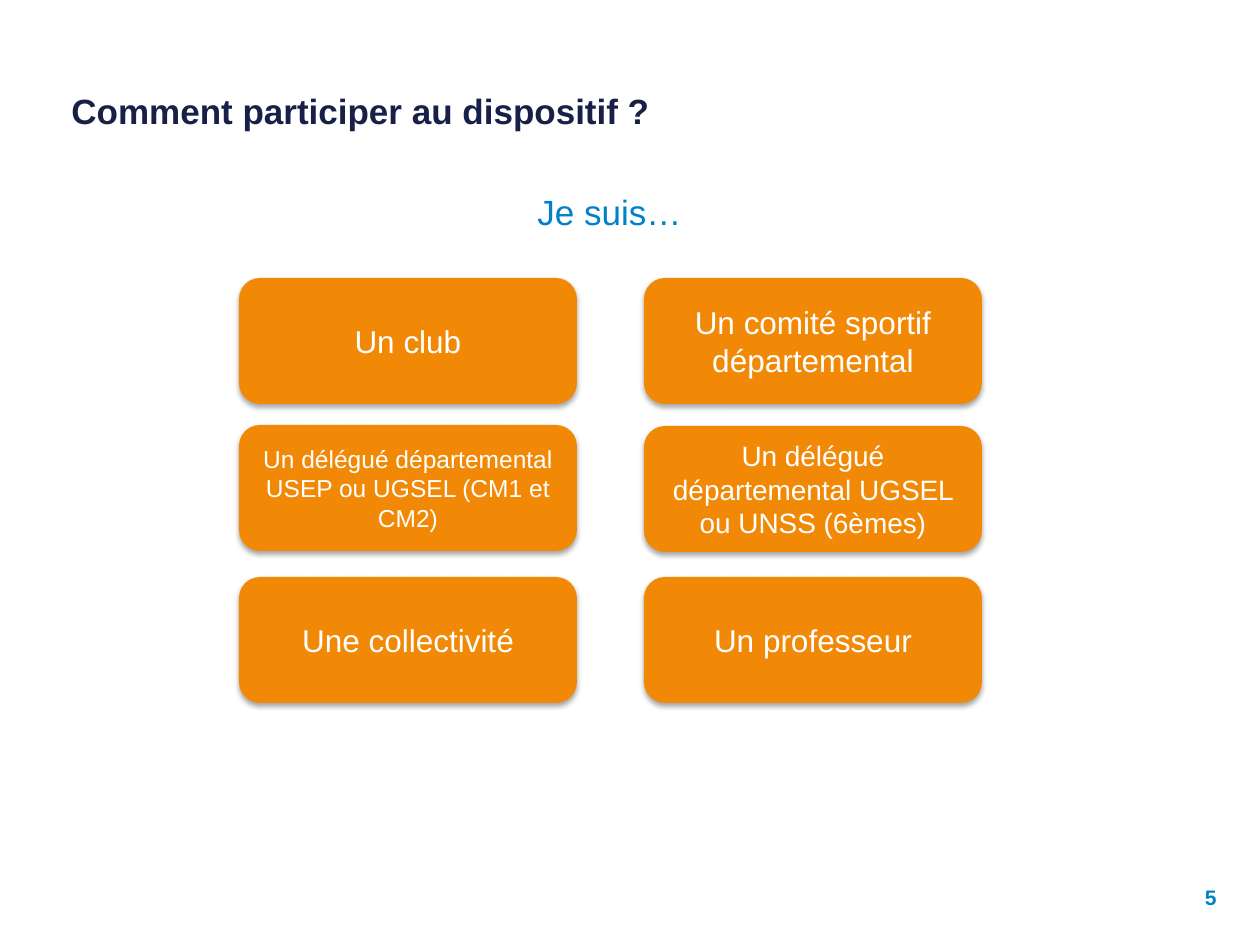
from lxml.etree import SubElement
from pptx import Presentation
from pptx.dml.color import RGBColor
from pptx.enum.shapes import MSO_SHAPE
from pptx.enum.text import MSO_ANCHOR, PP_ALIGN
from pptx.oxml.ns import qn
from pptx.util import Emu, Pt

PX = 914400 / 126
NAVY, BLUE, ORANGE, WHITE = "182048", "0081C8", "F18907", "FFFFFF"
COLUMNS = (239, 644)
CARD_WIDTH, CARD_HEIGHT = 338, 126
CARDS = [
    (0, 278, "Un club", 18),
    (1, 278, "Un comité sportif départemental", 18),
    (0, 577, "Une collectivité", 18),
    (1, 577, "Un professeur", 18),
    (0, 425, "Un délégué départemental USEP ou UGSEL (CM1 et CM2)", 14),
    (1, 426, "Un délégué départemental UGSEL ou UNSS (6èmes)", 16),
]


def color(value):
    return RGBColor.from_string(value)


class SlideBuilder:
    """Holds the style and the current slide, and adds its elements."""

    font_name = "Arial"

    def __init__(self, slide):
        self.slide = slide

    def box(self, *lengths):
        return [Emu(round(length * PX)) for length in lengths]

    def set_text(self, shape, text, size, fill, align, anchor, bold=False):
        frame = shape.text_frame
        frame.word_wrap = True
        frame.vertical_anchor = anchor
        paragraph = frame.paragraphs[0]
        paragraph.text = text
        paragraph.alignment = align
        font = paragraph.runs[0].font
        style = {"name": self.font_name, "size": Pt(size), "bold": bold}
        for name, value in style.items():
            setattr(font, name, value)
        font.color.rgb = color(fill)

    def label(self, box, text, size, fill, align=PP_ALIGN.LEFT,
              anchor=MSO_ANCHOR.TOP, bold=False):
        shape = self.slide.shapes.add_textbox(*self.box(*box))
        self.set_text(shape, text, size, fill, align, anchor, bold)

    def shadow(self, shape):
        shape.shadow.inherit = False
        effects = shape.element.spPr.find(qn("a:effectLst"))
        outer = SubElement(effects, qn("a:outerShdw"), blurRad="40000",
                           dist="23000", dir="5400000", rotWithShape="0")
        black = SubElement(outer, qn("a:srgbClr"), val="000000")
        SubElement(black, qn("a:alpha"), val="35000")

    def card(self, box, text, size):
        shape = self.slide.shapes.add_shape(
            MSO_SHAPE.ROUNDED_RECTANGLE, *self.box(*box))
        shape.fill.solid()
        shape.fill.fore_color.rgb = color(ORANGE)
        shape.line.fill.background()
        self.shadow(shape)
        self.set_text(shape, text, size, WHITE, PP_ALIGN.CENTER,
                      MSO_ANCHOR.MIDDLE)


def main():
    presentation = Presentation()
    presentation.slide_width = Emu(round(1260 * PX))
    presentation.slide_height = Emu(round(945 * PX))
    builder = SlideBuilder(
        presentation.slides.add_slide(presentation.slide_layouts[6]))
    builder.label((850, 878, 379, 39), "5", 12, BLUE,
                  PP_ALIGN.RIGHT, MSO_ANCHOR.MIDDLE, True)
    builder.label((59, 83, 1137, 57), "Comment participer au dispositif ?",
                  20, NAVY, bold=True)
    builder.label((525, 184, 174, 79), "Je suis…", 20, BLUE)
    for column, top, text, size in CARDS:
        builder.card((COLUMNS[column], top, CARD_WIDTH, CARD_HEIGHT), text, size)
    presentation.save("out.pptx")


if __name__ == "__main__":
    main()
